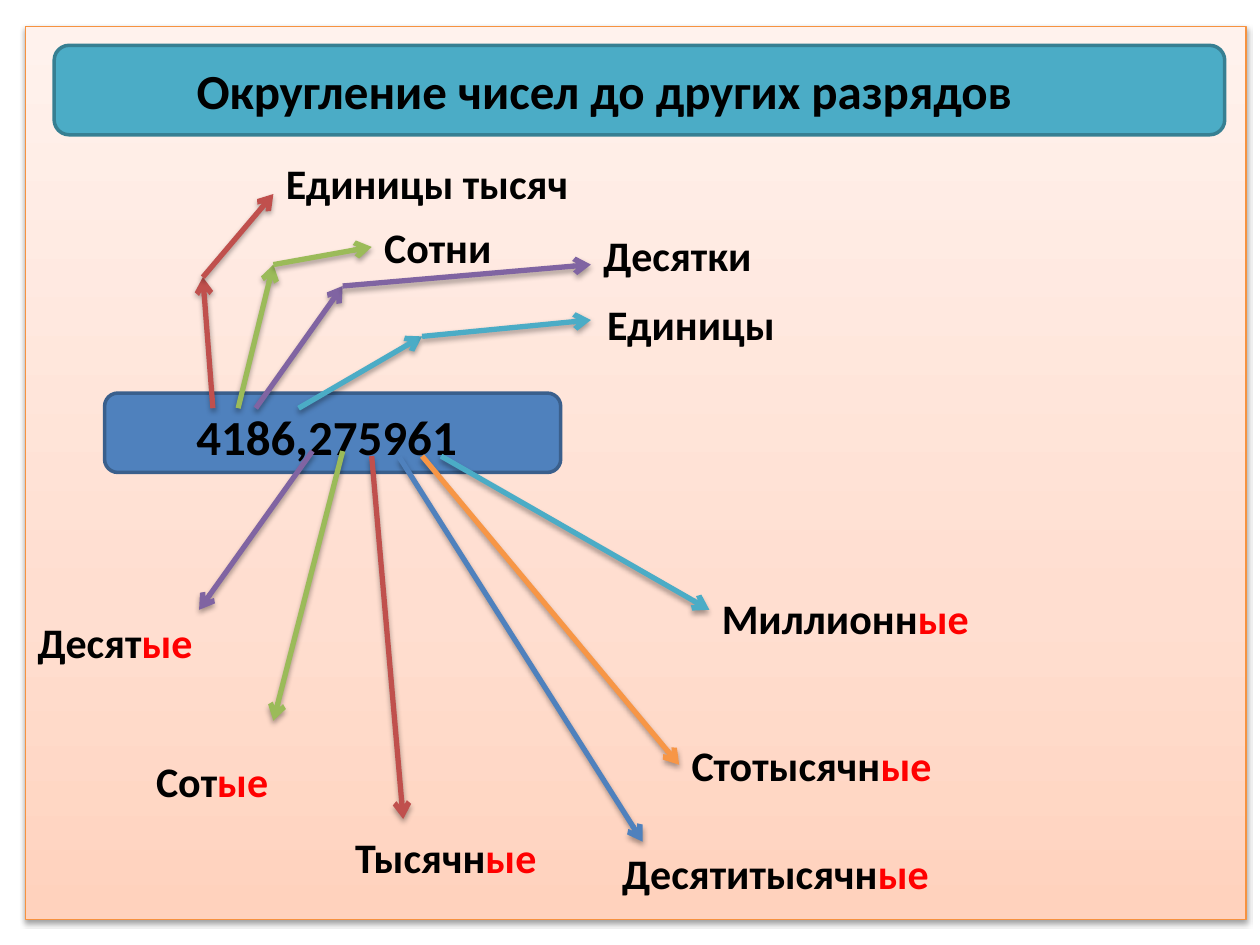
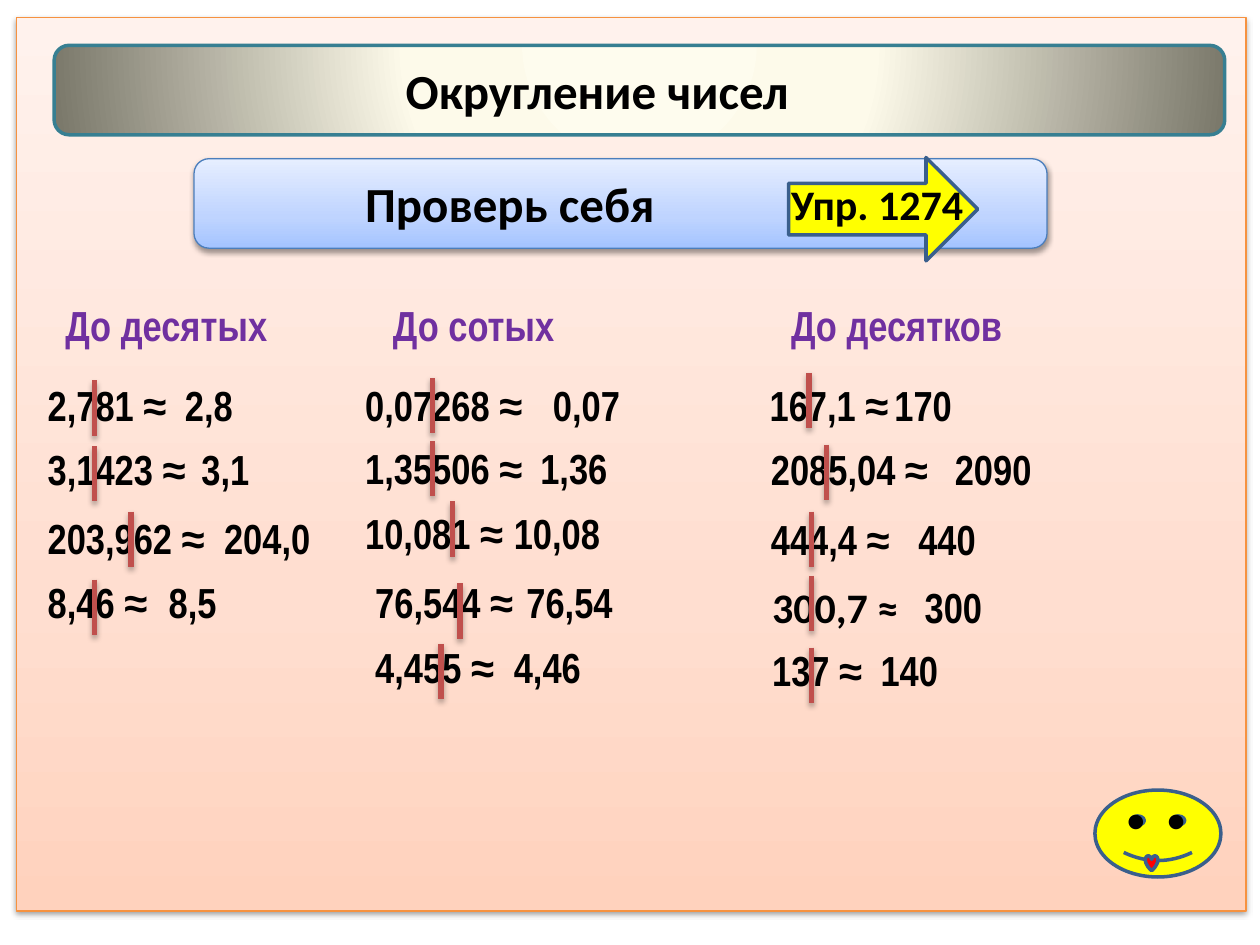
from dataclasses import dataclass
from itertools import pairwise

from lxml.etree import SubElement
from pptx import Presentation
from pptx.dml.color import RGBColor as Rgb
from pptx.enum.shapes import MSO_CONNECTOR as Connector, MSO_SHAPE as Preset
from pptx.enum.text import MSO_ANCHOR as Anchor, MSO_AUTO_SIZE as AutoSize, PP_ALIGN as Align
from pptx.oxml.ns import qn
from pptx.util import Inches, Pt


@dataclass(frozen=True)
class Theme:
    font: str = "Calibri"
    narrow: str = "Arial Narrow"
    title_size: int = 28
    body_size: int = 24
    eye_size: int = 18
    thick: float = 3
    outline: float = 2
    hairline: float = 0.75
    black: str = "000000"
    red: str = "FF0000"
    heading: str = "7030A0"
    yellow: str = "FFFF00"
    blue: str = "4F81BD"
    blue_edge: str = "3A5F8C"
    brick: str = "C0504D"
    green: str = "9BBB59"
    purple: str = "8064A2"
    teal: str = "4BACC6"
    teal_edge: str = "377F92"
    orange: str = "F79646"
    panel_edge: str = "F69240"
    ribbon_edge: str = "4B7EBC"
    panel: tuple = ((0, "FFD2BD"), (35, "FFDED0"), (100, "FFF2ED"))
    ribbon: tuple = ((0, "A4C4FF"), (35, "BFD4FF"), (100, "E6EEFF"))
    cream: tuple = ((0, "FEFCEE"), (40, "FDFAEA"), (100, "7B796B"))


THEME = Theme()
LABEL_HEIGHT = 0.5
CUT_HEIGHT = 0.44
TOP, LEFT = 0, 1

# Word stem, red ending, label box (left, top, width), colour, arrow points, joined side
PLACES = [
    ("Единицы тысяч", "", (2.17, 1.2, 2.68), THEME.brick,
     [(1.69, 3.24), (1.61, 2.2), (2.17, 1.54)], None),
    ("Сотни", "", (2.95, 1.71, 2.09), THEME.green,
     [(1.89, 3.24), (2.17, 2.1), (2.95, 1.94)], LEFT),
    ("Десятки", "", (4.69, 1.77, 2.28), THEME.purple,
     [(2.03, 3.24), (2.72, 2.27), (4.69, 2.1)], None),
    ("Единицы", "", (4.72, 2.32, 2.13), THEME.teal,
     [(2.37, 3.24), (3.35, 2.67), (4.69, 2.54)], None),
    ("Десят", "ые", (0.2, 4.84, 2.76), THEME.purple, [(2.48, 3.58), (1.57, 4.84)], TOP),
    ("Сот", "ые", (1.14, 5.95, 2.2), THEME.green, [(2.72, 3.58), (2.17, 5.72)], None),
    ("Тысячн", "ые", (2.72, 6.55, 2.68), THEME.brick, [(2.95, 3.62), (3.2, 6.5)], None),
    ("Десятитысячн", "ые", (4.84, 6.68, 2.64), THEME.blue, [(3.17, 3.63), (5.1, 6.68)], None),
    ("Стотысячн", "ые", (5.39, 5.82, 3.7), THEME.orange, [(3.35, 3.62), (5.39, 6.07)], LEFT),
    ("Миллионн", "ые", (5.63, 4.65, 3.15), THEME.teal, [(3.5, 3.62), (5.63, 4.84)], None),
]

# Heading, its left, then rows: top, left, number, answer left, answer, cut x, cut top
COLUMNS = [
    ("До десятых", 0.42, [
        (2.96, 0.28, "2,781 ≈", 1.37, "2,8", 0.75, 3.02),
        (3.47, 0.28, "3,1423 ≈", 1.5, "3,1", 0.75, 3.54),
        (4.02, 0.28, "203,962 ≈", 1.68, "204,0", 1.04, 4.06),
        (4.53, 0.28, "8,46 ≈", 1.24, "8,5", 0.75, 4.6),
    ]),
    ("До сотых", 3.02, [
        (2.96, 2.8, "0,07268 ≈", 4.29, "0,07", 3.43, 3.0),
        (3.46, 2.8, "1,35506 ≈", 4.19, "1,36", 3.43, 3.5),
        (3.98, 2.8, "10,081 ≈", 3.98, "10,08", 3.59, 3.98),
        (4.53, 2.88, "76,544 ≈", 4.08, "76,54", 3.65, 4.63),
        (5.04, 2.88, "4,455 ≈", 3.98, "4,46", 3.5, 5.11),
    ]),
    ("До десятков", 6.18, [
        (2.96, 6.01, "167,1 ≈", 7.0, "170", 6.42, 2.96),
        (3.47, 6.02, "2085,04 ≈", 7.48, "2090", 6.56, 3.53),
        (4.03, 6.02, "444,4 ≈", 7.19, "440", 6.44, 4.06),
        (4.57, 6.03, "300,7 ≈", 7.24, "300", 6.44, 4.57),
        (5.07, 6.03, "137 ≈", 6.89, "140", 6.44, 5.14),
    ]),
]
CALIBRI_NUMBERS = {"300,7 ≈"}


def apply_format(target, values):
    for name, value in values.items():
        setattr(target, name, value)


def add_color(parent, color):
    return SubElement(parent, qn("a:srgbClr"), val=color)


def add_shadow(shape, opacity, distance):
    properties = shape.element.find(qn("p:spPr"))
    effects = properties.find(qn("a:effectLst"))
    if effects is None:
        effects = SubElement(properties, qn("a:effectLst"))
    shadow = SubElement(effects, qn("a:outerShdw"), blurRad="40000",
                        dist=str(distance), dir="5400000", rotWithShape="0")
    SubElement(add_color(shadow, THEME.black), qn("a:alpha"), val=str(opacity * 1000))


def fill_gradient(shape, stops, radial=False):
    properties = shape.element.find(qn("p:spPr"))
    gradient = SubElement(properties, qn("a:gradFill"), rotWithShape="1")
    stop_list = SubElement(gradient, qn("a:gsLst"))
    for position, color in stops:
        add_color(SubElement(stop_list, qn("a:gs"), pos=str(position * 1000)), color)
    if radial:
        circle = SubElement(gradient, qn("a:path"), path="circle")
        SubElement(circle, qn("a:fillToRect"), l="50000", t="-80000", r="50000", b="180000")
    else:
        SubElement(gradient, qn("a:lin"), ang="16200000", scaled="1")
    properties.find(qn("a:prstGeom")).addnext(gradient)


def add_box(slide, preset, box, fill, edge, width=THEME.outline, radial=False, shadow=False):
    shape = slide.shapes.add_shape(preset, *map(Inches, box))
    shape.shadow.inherit = False
    shape.line.color.rgb = Rgb.from_string(edge)
    shape.line.width = Pt(width)
    if isinstance(fill, str):
        shape.fill.solid()
        shape.fill.fore_color.rgb = Rgb.from_string(fill)
    else:
        fill_gradient(shape, fill, radial)
    if shadow:
        add_shadow(shape, 38, 20000)
    return shape


def write_runs(shape, runs, size, font=THEME.font, bold=True):
    """Fill a text shape with (text, colour) runs on one left-aligned line."""
    frame = shape.text_frame
    apply_format(frame, {"word_wrap": True, "auto_size": AutoSize.SHAPE_TO_FIT_TEXT,
                         "vertical_anchor": Anchor.TOP})
    paragraph = frame.paragraphs[0]
    paragraph.alignment = Align.LEFT
    for text, color in runs:
        run = paragraph.add_run()
        run.text = text
        apply_format(run.font, {"name": font, "size": Pt(size), "bold": bold})
        run.font.color.rgb = Rgb.from_string(color)


def add_text(slide, box, text, color=THEME.black, size=THEME.body_size,
             font=THEME.font, bold=True, ending=""):
    shape = slide.shapes.add_textbox(*map(Inches, box))
    runs = [(text, color)] + ([(ending, THEME.red)] if ending else [])
    write_runs(shape, runs, size, font, bold)
    return shape


def add_line(slide, start, end, color, arrow=False):
    line = slide.shapes.add_connector(Connector.STRAIGHT, *map(Inches, (*start, *end)))
    line.line.color.rgb = Rgb.from_string(color)
    line.line.width = Pt(THEME.thick)
    if arrow:
        SubElement(line.element.find(qn("p:spPr")).find(qn("a:ln")), qn("a:tailEnd"), type="arrow")
    add_shadow(line, 35, 23000)
    return line


def add_slide(presentation, title, title_left, panel, band, radial=False):
    """Start a slide with the shared panel, header band and title."""
    slide = presentation.slides.add_slide(presentation.slide_layouts[5])
    add_box(slide, Preset.RECTANGLE, panel, THEME.panel, THEME.panel_edge,
            THEME.hairline, shadow=True)
    add_box(slide, Preset.ROUNDED_RECTANGLE, (0.43, 0.36, 9.29, 0.71), band,
            THEME.teal_edge, radial=radial)
    heading = slide.shapes.title
    apply_format(heading, {"left": Inches(title_left), "top": Inches(0.43),
                           "width": Inches(9.65 - title_left), "height": Inches(0.57)})
    write_runs(heading, [(title, THEME.black)], THEME.title_size)
    heading.element.getparent().append(heading.element)
    return slide


def add_place(slide, stem, ending, label_box, color, points, side):
    """Label one digit's place and lead arrows to the label."""
    label = add_text(slide, (*label_box, LABEL_HEIGHT), stem, ending=ending)
    for start, end in pairwise(points):
        arrow = add_line(slide, start, end, color, arrow=True)
    if side is not None:
        arrow.end_connect(label, side)


def add_column(slide, heading, heading_left, rows):
    """Rounding column: numbers, answers and the cut after the kept digit."""
    add_text(slide, (heading_left, 2.33, 2.6, LABEL_HEIGHT), heading,
             THEME.heading, font=THEME.narrow)
    for top, left, number, answer_left, answer, cut, cut_top in rows:
        font = THEME.font if number in CALIBRI_NUMBERS else THEME.narrow
        add_text(slide, (left, top, 1.73, LABEL_HEIGHT), number, font=font)
        add_text(slide, (answer_left, top, 1.57, LABEL_HEIGHT), answer, font=THEME.narrow)
        add_line(slide, (cut, cut_top), (cut, cut_top + CUT_HEIGHT), THEME.brick)


def add_smiley(slide):
    add_box(slide, Preset.SMILEY_FACE, (8.69, 6.27, 1, 0.69), THEME.yellow, THEME.blue_edge)
    add_box(slide, Preset.HEART, (9.09, 6.79, 0.1, 0.12), THEME.red, THEME.blue_edge)
    for left in (8.84, 9.16):
        add_text(slide, (left, 6.3, 0.81, 0.4), "●", size=THEME.eye_size, bold=False)


def build_places_slide(presentation):
    slide = add_slide(presentation, "Округление чисел до других разрядов", 1.46,
                      (0.2, 0.21, 9.69, 7.09), THEME.teal)
    add_box(slide, Preset.ROUNDED_RECTANGLE, (0.83, 3.12, 3.62, 0.63),
            THEME.blue, THEME.blue_edge)
    add_text(slide, (1.46, 3.18, 2.99, 0.57), "4186,275961", size=THEME.title_size)
    for place in PLACES:
        add_place(slide, *place)


def build_check_slide(presentation):
    slide = add_slide(presentation, "Округление чисел", 3.12,
                      (0.13, 0.14, 9.76, 7.09), THEME.cream, radial=True)
    # Subtitle ribbon with the exercise arrow
    add_box(slide, Preset.ROUNDED_RECTANGLE, (1.54, 1.26, 6.77, 0.71), THEME.ribbon,
            THEME.ribbon_edge, THEME.hairline, shadow=True)
    add_text(slide, (2.8, 1.33, 3.4, 0.57), "Проверь себя", size=THEME.title_size)
    add_box(slide, Preset.RIGHT_ARROW, (6.26, 1.25, 1.5, 0.82), THEME.yellow, THEME.blue_edge)
    add_text(slide, (6.18, 1.37, 1.65, LABEL_HEIGHT), "Упр. 1274")
    for column in COLUMNS:
        add_column(slide, *column)
    add_smiley(slide)


def main():
    presentation = Presentation()
    apply_format(presentation, {"slide_width": Inches(10), "slide_height": Inches(7.5)})
    build_places_slide(presentation)
    build_check_slide(presentation)
    presentation.save("out.pptx")


if __name__ == "__main__":
    main()
